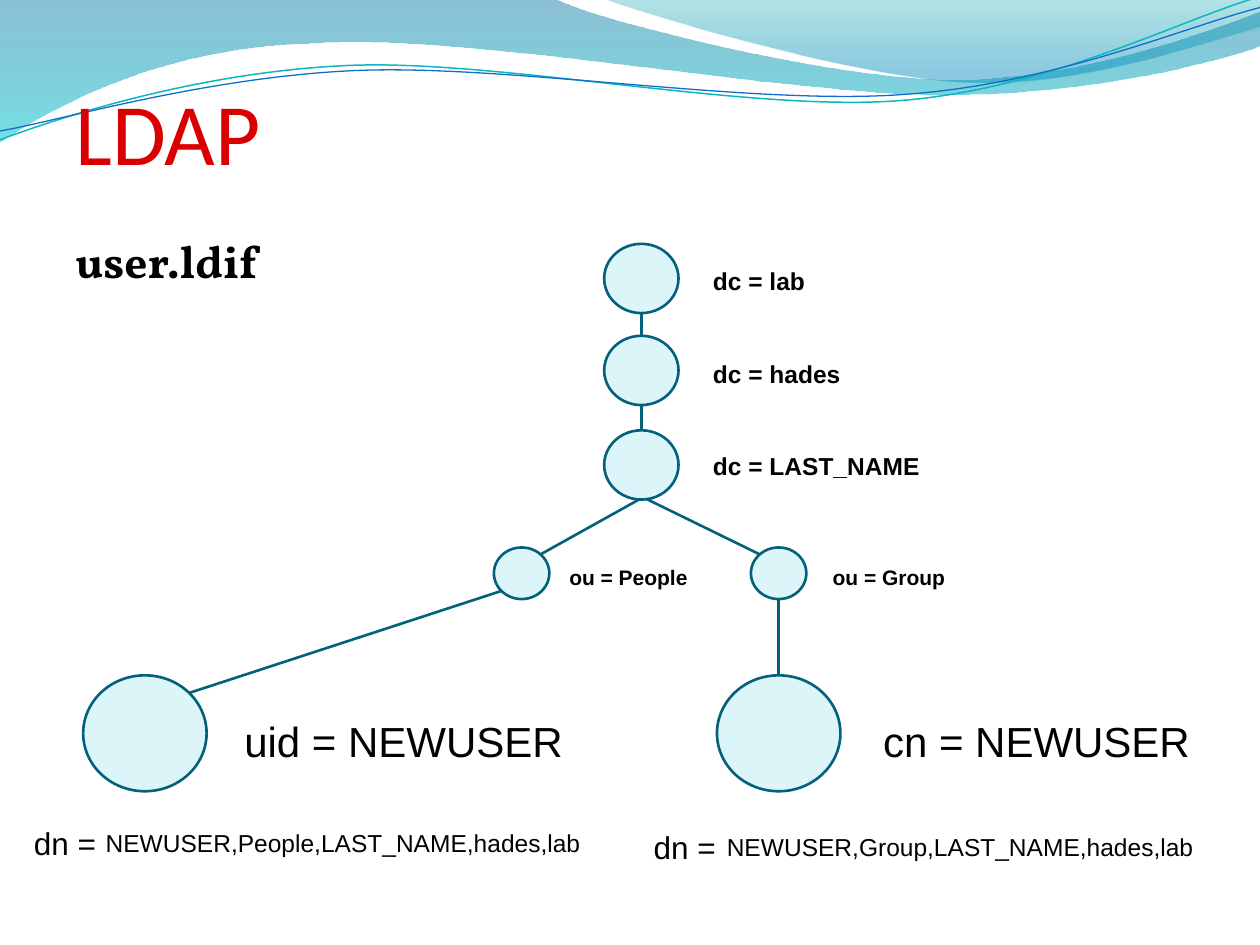
from dataclasses import dataclass

from lxml.etree import SubElement
from pptx import Presentation
from pptx.dml.color import RGBColor
from pptx.enum.shapes import MSO_CONNECTOR, MSO_SHAPE
from pptx.enum.text import MSO_ANCHOR, MSO_AUTO_SIZE, PP_ALIGN
from pptx.oxml.ns import qn
from pptx.util import Inches, Pt

COLORS = {
    "title": "DA0002", "text": "000000", "node": "DBF5F9", "edge": "04617B",
    "band top": "0074A1", "band bottom": "00C6CF",
    "corner top": "00A1A9", "corner bottom": "008BBF",
    "teal line": "0AB8BF", "blue line": "0F6FC6",
}
Point = tuple[float, float]


@dataclass
class Stop:
    position: float
    color: str
    opacity: int


@dataclass
class Wave:
    """A start point, then segments: one point is a line, three are a curve."""
    start: Point
    segments: list[list[Point]]
    stops: tuple[Stop, ...] = ()
    line: str = ""
    width: float = 0


@dataclass
class Node:
    x: float
    y: float
    width: float
    height: float


@dataclass
class Label:
    text: str
    left: float
    top: float
    width: float
    height: float
    size: int
    bold: bool = False


WAVES = [
    Wave((0, 0), [
        [(4.4, -0.01)],
        [(4.76, 0.17), (6.64, 0.63), (7.58, 0.63)],
        [(8.53, 0.63), (9.58, 0.26), (10, 0.09)],
        [(10.01, 0.36)],
        [(9.83, 0.44), (8.7, 0.76), (7.46, 0.75)],
        [(6.22, 0.75), (3.82, 0.28), (2.57, 0.34)],
        [(1.29, 0.36), (0.46, 0.83), (-0.01, 1.13)],
    ], stops=(Stop(0, "band top", 45), Stop(1, "band bottom", 55))),
    Wave((4.79, -0.01), [
        [(5.09, 0.11), (6.82, 0.62), (7.69, 0.65)],
        [(8.56, 0.69), (9.61, 0.32), (10, 0.21)],
        [(10, 0)],
    ], stops=(Stop(0, "corner top", 30), Stop(0.8, "corner bottom", 45))),
    Wave((0, 1.11), [
        [(0.48, 0.93), (1.58, 0.57), (2.77, 0.52)],
        [(3.95, 0.47), (5.93, 0.89), (7.13, 0.8)],
        [(8.33, 0.71), (9.38, 0.15), (9.98, -0.02)],
    ], line="teal line", width=0.85),
    Wave((0, 1.04), [
        [(0.47, 0.96), (1.64, 0.61), (2.83, 0.56)],
        [(4.03, 0.51), (5.97, 0.84), (7.17, 0.75)],
        [(8.36, 0.67), (9.41, 0.21), (10, 0.06)],
    ], line="blue line", width=0.75),
]

# Tree: domain chain, organizational units, entries
DOMAIN_X, PEOPLE_X, GROUP_X, USER_X = 5.09, 4.14, 6.18, 1.15
NODES = (
    [Node(DOMAIN_X, y, 0.59, 0.55) for y in (2.21, 2.94, 3.69)]
    + [Node(x, 4.55, 0.44, 0.41) for x in (PEOPLE_X, GROUP_X)]
    + [Node(x, 5.82, 0.98, 0.92) for x in (USER_X, GROUP_X)]
)
EDGES = [
    ((DOMAIN_X, 2.49), (DOMAIN_X, 2.67)),
    ((DOMAIN_X, 3.22), (DOMAIN_X, 3.41)),
    ((5.08, 3.96), (4.29, 4.4)),
    ((5.13, 3.96), (6.03, 4.4)),
    ((3.98, 4.69), (1.5, 5.5)),
    ((GROUP_X, 4.75), (GROUP_X, 5.36)),
]
LABELS = [
    Label("dc = lab", 5.56, 2.01, 1.71, 0.4, 14, True),
    Label("dc = hades", 5.56, 2.75, 1.64, 0.38, 14, True),
    Label("dc = LAST_NAME", 5.56, 3.48, 2.37, 0.41, 14, True),
    Label("ou = People", 4.42, 4.38, 1.33, 0.33, 12, True),
    Label("ou = Group", 6.51, 4.38, 1.21, 0.33, 12, True),
    Label("uid = NEWUSER", 1.84, 5.58, 2.91, 0.48, 24),
    Label("cn = NEWUSER", 6.91, 5.58, 2.91, 0.48, 24),
    Label("dn =", 0.17, 6.44, 0.74, 0.42, 18),
    Label("NEWUSER,People,LAST_NAME,hades,lab", 0.74, 6.47, 4.24, 0.42, 14),
    Label("dn =", 5.09, 6.47, 0.74, 0.42, 18),
    Label("NEWUSER,Group,LAST_NAME,hades,lab", 5.67, 6.5, 4.24, 0.42, 14),
]


def rgb(name: str) -> RGBColor:
    return RGBColor.from_string(COLORS[name])


def bend(shape, segments: list[list[Point]]) -> None:
    """Join each three lines that stand for a curve into one Bezier segment."""
    lines = iter(list(shape.element.iter(qn("a:lnTo"))))
    for segment in segments:
        first, *others = [next(lines) for _ in segment]
        if others:
            first.tag = qn("a:cubicBezTo")
        for other in others:
            first.append(other[0])
            other.getparent().remove(other)


def add_wave(page, wave: Wave, front) -> None:
    points = [(Inches(x), Inches(y)) for x, y in [wave.start, *sum(wave.segments, [])]]
    builder = page.shapes.build_freeform(*points[0])
    builder.add_line_segments(points[1:], close=bool(wave.stops))
    shape = builder.convert_to_shape()
    bend(shape, wave.segments)
    shape.shadow.inherit = False
    if wave.stops:
        shape.line.fill.background()
        shape.fill.gradient()
        shape.fill.gradient_angle = 270
        for target, stop in zip(shape.fill.gradient_stops, wave.stops):
            target.position = stop.position
            target.color.rgb = rgb(stop.color)
        for color, stop in zip(shape.element.spPr.iter(qn("a:srgbClr")), wave.stops):
            SubElement(color, qn("a:alpha"), val=str(stop.opacity * 1000))
    else:
        shape.fill.background()
        shape.line.color.rgb = rgb(wave.line)
        shape.line.width = Pt(wave.width)
    front.element.addprevious(shape.element)


def add_node(page, node: Node) -> None:
    shape = page.shapes.add_shape(
        MSO_SHAPE.OVAL, Inches(node.x - node.width / 2), Inches(node.y - node.height / 2),
        Inches(node.width), Inches(node.height))
    shape.shadow.inherit = False
    shape.fill.solid()
    shape.fill.fore_color.rgb = rgb("node")
    shape.line.color.rgb = rgb("edge")
    shape.line.width = Pt(1.5)


def add_edge(page, start: Point, end: Point) -> None:
    edge = page.shapes.add_connector(
        MSO_CONNECTOR.STRAIGHT, *(Inches(value) for value in (*start, *end)))
    edge.line.color.rgb = rgb("edge")
    edge.line.width = Pt(1.5)
    SubElement(edge.element.spPr, qn("a:effectLst"))


def write(box, text: str, size: int, font: str = "Arial", color: str = "text",
          bold: bool = False, anchor=MSO_ANCHOR.TOP):
    frame = box.text_frame
    frame.word_wrap = True
    frame.auto_size = MSO_AUTO_SIZE.NONE
    frame.vertical_anchor = anchor
    frame.margin_left = frame.margin_right = Inches(0.1)
    frame.margin_top = frame.margin_bottom = Inches(0.1)
    para = frame.paragraphs[0]
    para.alignment = PP_ALIGN.LEFT
    para.space_before = Pt(0)
    span = para.add_run()
    span.text = text
    span.font.size, span.font.name, span.font.bold = Pt(size), font, bold
    span.font.color.rgb = rgb(color)
    return para


def place(box, left: float, top: float, width: float, height: float) -> None:
    box.left, box.top = Inches(left), Inches(top)
    box.width, box.height = Inches(width), Inches(height)


def main() -> None:
    deck = Presentation()
    deck.slide_width, deck.slide_height = Inches(10), Inches(7.5)
    page = deck.slides.add_slide(deck.slide_layouts[1])

    # Title and file name
    title, body = page.placeholders
    place(title, 0.5, 0.3, 9, 1.25)
    write(title, "LDAP", 50, "Calibri", "title", anchor=MSO_ANCHOR.BOTTOM)
    place(body, 0.5, 1.75, 2.45, 0.84)
    para = write(body, "user.ldif", 26, "Vollkorn", bold=True)
    properties = para._p.get_or_add_pPr()
    properties.set("marL", str(Inches(0.3)))
    properties.set("indent", str(-Inches(0.3)))
    SubElement(properties, qn("a:buNone"))

    # Waves behind the title
    for wave in WAVES:
        add_wave(page, wave, title)

    # Directory tree
    for node in NODES:
        add_node(page, node)
    for start, end in EDGES:
        add_edge(page, start, end)
    for label in LABELS:
        box = page.shapes.add_textbox(
            Inches(label.left), Inches(label.top), Inches(label.width), Inches(label.height))
        write(box, label.text, label.size, bold=label.bold)

    deck.save("out.pptx")


if __name__ == "__main__":
    main()
